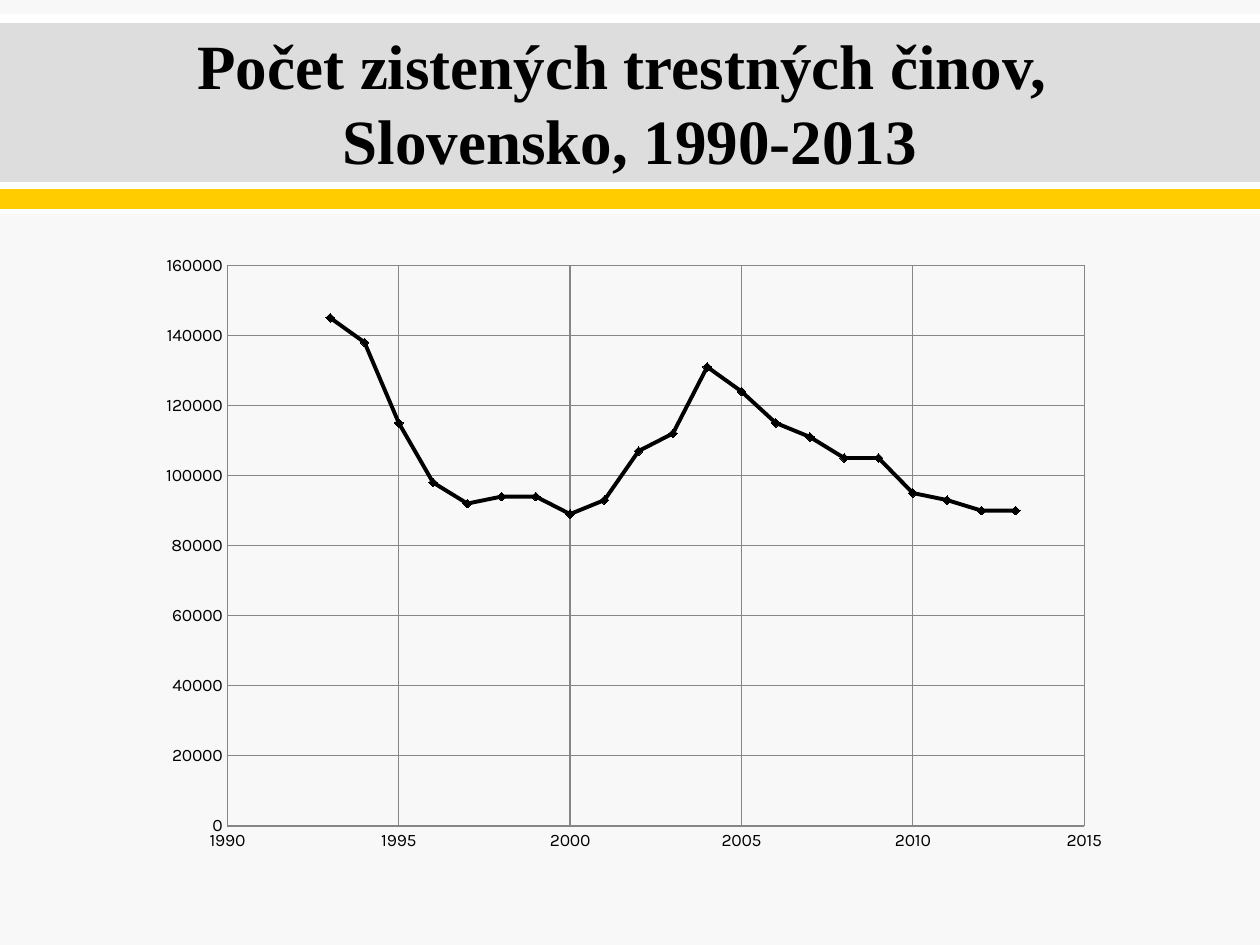
from dataclasses import dataclass

from lxml import etree
from pptx import Presentation
from pptx.chart.data import XyChartData
from pptx.dml.color import RGBColor
from pptx.enum.chart import XL_CHART_TYPE as ChartType
from pptx.enum.chart import XL_MARKER_STYLE as Marker
from pptx.enum.chart import XL_TICK_MARK as Tick
from pptx.enum.shapes import MSO_SHAPE as Shape
from pptx.enum.text import MSO_ANCHOR as Anchor
from pptx.enum.text import PP_ALIGN as Align
from pptx.oxml import parse_xml
from pptx.oxml.ns import nsdecls, qn
from pptx.util import Emu, Pt

BACKGROUND = RGBColor(0xF8, 0xF8, 0xF8)
WHITE = RGBColor(0xFF, 0xFF, 0xFF)
GREY = RGBColor(0xDD, 0xDD, 0xDD)
YELLOW = RGBColor(0xFF, 0xCC, 0x00)
BLACK = RGBColor(0, 0, 0)
GRID = RGBColor(0x86, 0x86, 0x86)
GREEN = RGBColor(0x00, 0xB0, 0x50)

SLIDE_W, SLIDE_H = 1260, 945
FIRST_YEAR = 1993
FIRST_GREEN_YEAR = 2010
CRIMES = [145000, 138000, 115000, 98000, 92000, 94000, 94000,
          89000, 93000, 107000, 112000, 131000, 124000, 115000,
          111000, 105000, 105000, 95000, 93000, 90000, 90000]


@dataclass
class Band:
    top: int
    height: int
    color: RGBColor


BANDS = [Band(14, 200, WHITE), Band(23, 159, GREY), Band(189, 20, YELLOW)]


def px(n: int) -> Emu:
    return Emu(round(n * 914400 / 126))


def draw_band(slide, band: Band) -> None:
    sp = slide.shapes.add_shape(Shape.RECTANGLE, 0, px(band.top), px(SLIDE_W), px(band.height))
    sp.shadow.inherit = False
    sp.fill.solid()
    sp.fill.fore_color.rgb = band.color
    sp.line.fill.background()


def set_text(tf, text: str, *, font: str, size: int, color: RGBColor,
             bold: bool = False, align=Align.CENTER, outline: RGBColor = None) -> None:
    tf.word_wrap = True
    tf.vertical_anchor = Anchor.MIDDLE
    p = tf.paragraphs[0]
    p.text = text
    p.alignment = align
    for r in p.runs:
        r.font.name = font
        r.font.size = Pt(size)
        r.font.bold = bold
        r.font.color.rgb = color
        if outline is not None:
            r.font._element.insert(0, parse_xml(
                f'<a:ln {nsdecls("a")} w="14000"><a:solidFill>'
                f'<a:srgbClr val="{outline}"/></a:solidFill></a:ln>'))


def format_axis(axis, low: int, high: int, step: int) -> None:
    axis.minimum_scale, axis.maximum_scale, axis.major_unit = low, high, step
    axis.major_tick_mark = axis.minor_tick_mark = Tick.NONE
    axis.has_major_gridlines = True
    for line in (axis.format.line, axis.major_gridlines.format.line):
        line.color.rgb = GRID
        line.width = Pt(0.75)
    axis.tick_labels.number_format = "General"
    axis.tick_labels.number_format_is_linked = False


def color_marker(marker, color: RGBColor) -> None:
    marker.style = Marker.DIAMOND
    marker.size = 5
    marker.format.fill.solid()
    marker.format.fill.fore_color.rgb = color
    marker.format.line.color.rgb = color


def set_plot_area(chart, **box: float) -> None:
    area = chart._chartSpace.chart.plotArea
    for old in area.findall(qn("c:layout")):
        area.remove(old)
    layout = etree.Element(qn("c:layout"))
    manual = etree.SubElement(layout, qn("c:manualLayout"))
    settings = {"layoutTarget": "inner", "xMode": "edge", "yMode": "edge", **box}
    for tag, value in settings.items():
        etree.SubElement(manual, qn(f"c:{tag}")).set("val", str(value))
    area.insert(0, layout)


def draw_chart(slide) -> None:
    data = XyChartData()
    points = data.add_series("Series 1")
    for year, count in enumerate(CRIMES, FIRST_YEAR):
        points.add_data_point(year, count)
    chart = slide.shapes.add_chart(ChartType.XY_SCATTER_SMOOTH, px(124), px(244),
                                   px(1014), px(646), data).chart
    chart.has_legend = False
    chart.has_title = False
    chart.font.name = "Karla"
    chart.font.size = Pt(10)
    chart.font.color.rgb = BLACK
    chart.plots[0].vary_by_categories = False
    format_axis(chart.category_axis, 1990, 2015, 5)
    format_axis(chart.value_axis, 0, 160000, 20000)
    set_plot_area(chart, x=0.102, y=0.033, w=0.845, h=0.868)

    # Black curve, with the latest years marked in green
    series = chart.plots[0].series[0]
    series.smooth = True
    series.format.line.color.rgb = BLACK
    series.format.line.width = Pt(2.25)
    color_marker(series.marker, BLACK)
    for i in range(FIRST_GREEN_YEAR - FIRST_YEAR, len(CRIMES)):
        color_marker(series.points[i].marker, GREEN)


def main() -> None:
    prs = Presentation()
    prs.slide_width, prs.slide_height = px(SLIDE_W), px(SLIDE_H)
    slide = prs.slides.add_slide(prs.slide_layouts[5])
    slide.background.fill.solid()
    slide.background.fill.fore_color.rgb = BACKGROUND

    # Header bands, with the title brought in front of them
    for band in BANDS:
        draw_band(slide, band)
    title = slide.shapes.title
    title.left, title.top, title.width, title.height = px(63), px(25), px(1134), px(154)
    set_text(title.text_frame, "Počet zistených trestných činov, \vSlovensko, 1990-2013",
             font="Times New Roman", size=36, color=BLACK, bold=True, outline=WHITE)
    slide.shapes._spTree.append(title._element)

    draw_chart(slide)
    prs.save("out.pptx")


if __name__ == "__main__":
    main()
